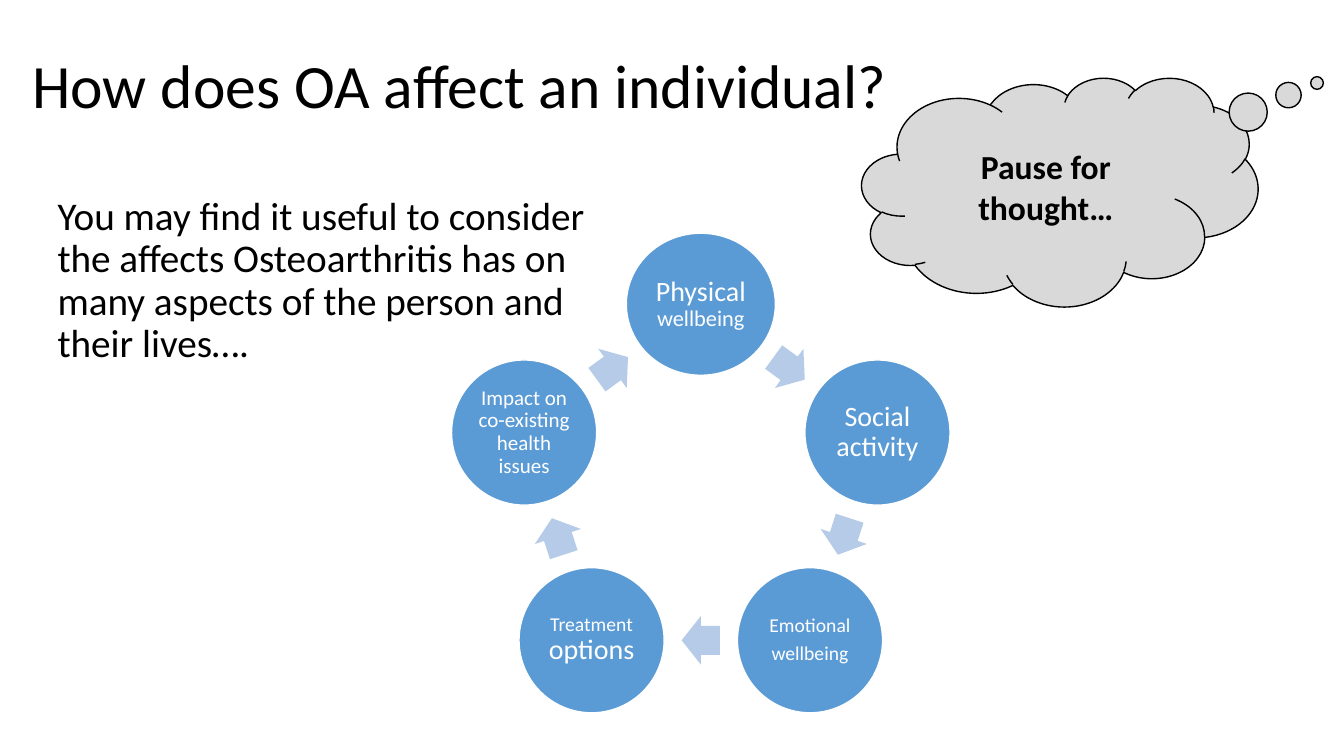
from math import cos, pi, radians, sin

from pptx import Presentation
from pptx.dml.color import RGBColor
from pptx.enum.shapes import MSO_SHAPE
from pptx.enum.text import MSO_ANCHOR, PP_ALIGN
from pptx.util import Pt

HUES = {"ink": "000000", "white": "FFFFFF", "blue": "5B9BD5",
        "pale": "B5CBE7", "grey": "D9D9D9"}

deck = Presentation()
deck.slide_width, deck.slide_height = Pt(960), Pt(540)
slide = deck.slides.add_slide(deck.slide_layouts[6])


def draw(kind, x, y, w, h, fill, edge=None):
    shape = slide.shapes.add_shape(kind, Pt(x), Pt(y), Pt(w), Pt(h))
    shape.shadow.inherit = False
    shape.fill.solid()
    shape.fill.fore_color.rgb = RGBColor.from_string(HUES[fill])
    if edge:
        shape.line.color.rgb = RGBColor.from_string(HUES[edge])
        shape.line.width = Pt(1)
    else:
        shape.line.fill.background()
    return shape


def write(shape, paras, hue, align, anchor, lead=0.9, after=0, bold=False):
    frame = shape.text_frame
    frame.word_wrap = True
    frame.vertical_anchor = anchor
    for i, runs in enumerate(paras):
        para = frame.add_paragraph() if i else frame.paragraphs[0]
        para.alignment = align
        para.line_spacing = lead
        para.space_after = Pt(after)
        for text, size in runs:
            run = para.add_run()
            run.text = text
            run.font.name = "Calibri"
            run.font.size = Pt(size)
            run.font.bold = bold
            run.font.color.rgb = RGBColor.from_string(HUES[hue])


# Title
title = slide.shapes.add_textbox(Pt(16), Pt(11), Pt(649), Pt(104))
write(title, [[("How does OA affect an individual?", 44)]],
      "ink", PP_ALIGN.LEFT, MSO_ANCHOR.MIDDLE)

# Cycle: five circles on a ring, an arrow halfway between each pair
MID_X, MID_Y, RING = 500.6, 350, 132.7
STEP = 72
topics = [
    ([[("Physical ", 20), ("wellbeing", 16)]], 106.5, 101.5),
    ([[("Social activity", 20)]], 103.7, 103.7),
    ([[("Emotional", 14)], [("wellbeing", 14)]], 103.7, 103.7),
    ([[("Treatment", 14), (" ", 9), ("options", 20)]], 103.7, 103.7),
    ([[("Impact on co-existing health issues", 15)]], 103.7, 103.7),
]
for i, (paras, wide, high) in enumerate(topics):
    turn = radians(i * STEP)
    x = MID_X + RING * sin(turn)
    y = MID_Y - RING * cos(turn)
    disc = draw(MSO_SHAPE.OVAL, x - wide / 2, y - high / 2, wide, high,
                "blue", "white")
    frame = disc.text_frame
    frame.margin_left = frame.margin_right = Pt(1.8)
    frame.margin_top = frame.margin_bottom = Pt(1.8)
    write(disc, paras, "white", PP_ALIGN.CENTER, MSO_ANCHOR.MIDDLE, after=5)

    angle = (i + 0.5) * STEP
    reach = RING * cos(pi / 5)
    x = MID_X + reach * sin(radians(angle))
    y = MID_Y - reach * cos(radians(angle))
    arrow = draw(MSO_SHAPE.RIGHT_ARROW, x - 13.7, y - 17.3, 27.4, 34.6, "pale")
    arrow.adjustments[0] = 0.6
    arrow.rotation = angle

# Body text
body = slide.shapes.add_textbox(Pt(34), Pt(137), Pt(408), Pt(343))
write(body, [[("You may find it useful to consider the affects Osteoarthritis "
               "has on many aspects of the person and their lives….", 28)]],
      "ink", PP_ALIGN.LEFT, MSO_ANCHOR.TOP)

# Thought cloud
cloud = draw(MSO_SHAPE.CLOUD_CALLOUT, 615.6, 55.4, 283, 163.4, "grey", "ink")
cloud.adjustments[0] = 0.649
cloud.adjustments[1] = -0.476
write(cloud, [[("Pause for thought…", 24)]], "ink", PP_ALIGN.CENTER,
      MSO_ANCHOR.MIDDLE, lead=1.0, bold=True)

deck.save("out.pptx")
